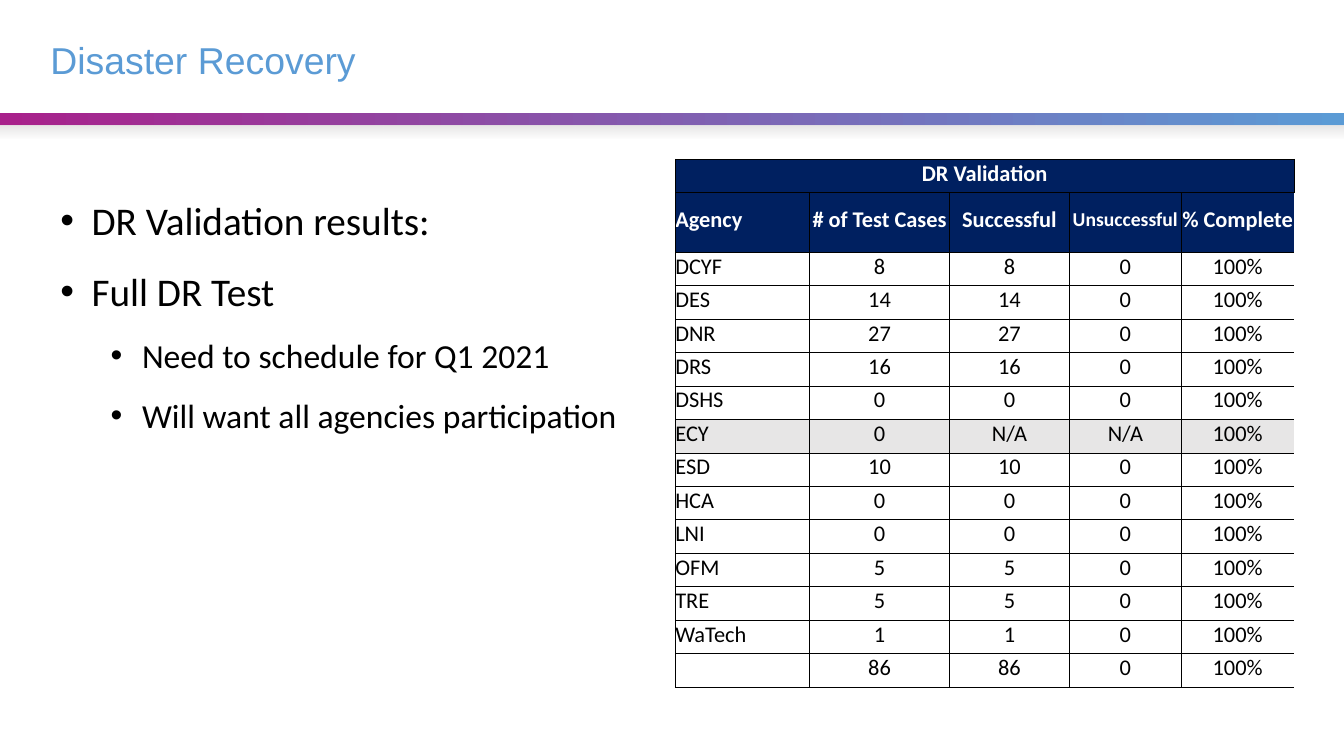
"""Disaster Recovery slide with test notes and a DR validation table."""
from lxml import etree
from pptx import Presentation
from pptx.dml import color
from pptx.enum import shapes, text
from pptx.oxml import ns
from pptx.util import Cm, Pt

TITLE = "Disaster Recovery"
NOTES = [
    (0, "DR Validation results:"),
    (0, "Full DR Test"),
    (1, "Need to schedule for Q1 2021"),
    (1, "Will want all agencies participation"),
]
NOTE_LEVELS = {0: (28, 0.79), 1: (24, 2.06)}
TABLE_TITLE = "DR Validation"
HEADINGS = ["Agency", "# of Test Cases", "Successful", "Unsuccessful", "% Complete"]
RESULTS = [
    ("DCYF", "8", "8", "0"),
    ("DES", "14", "14", "0"),
    ("DNR", "27", "27", "0"),
    ("DRS", "16", "16", "0"),
    ("DSHS", "0", "0", "0"),
    ("ECY", "0", "N/A", "N/A"),
    ("ESD", "10", "10", "0"),
    ("HCA", "0", "0", "0"),
    ("LNI", "0", "0", "0"),
    ("OFM", "5", "5", "0"),
    ("TRE", "5", "5", "0"),
    ("WaTech", "1", "1", "0"),
    ("", "86", "86", "0"),
]
COMPLETE = "100%"
COLUMN_WIDTHS = [3.38, 3.53, 3.02, 2.82, 2.84]
TABLE_HEIGHT, HEADING_HEIGHT = 13.31, 1.5
BANDS = [
    (2.84, (("A8218B", 100), ("5B9BD5", 100)), 0),
    (3.17, (("E7E6E6", 100), ("E7E6E6", 0)), 270),
]
BAND_HEIGHT = 0.33
NAVY, GREY, BLACK, WHITE, BLUE = "002060", "E7E6E6", "000000", "FFFFFF", "5B9BD5"
TITLE_FORMAT = {"name": "Arial", "size": Pt(26.7), "bold": False}


def rgb(value):
    return color.RGBColor.from_string(value)


def add_child(parent, tag, **attributes):
    return etree.SubElement(parent, ns.qn(tag), attributes)


def apply(target, formats):
    for name, value in formats.items():
        setattr(target, name, value)


def write(paragraph, words, ink, formats):
    run = paragraph.add_run()
    run.text = words
    apply(run.font, formats)
    run.font.color.rgb = rgb(ink)


def add_bands(slide, width):
    for top, stops, angle in BANDS:
        band = slide.shapes.add_shape(
            shapes.MSO_SHAPE.RECTANGLE, 0, Cm(top), width, Cm(BAND_HEIGHT))
        band.shadow.inherit = False
        band.line.fill.background()
        band.fill.gradient()
        band.fill.gradient_angle = angle
        for stop, (tint, opacity) in zip(band.fill.gradient_stops, stops):
            stop.color.rgb = rgb(tint)
        if opacity < 100:
            last = list(band.fill._fill._gradFill.iter(ns.qn("a:srgbClr")))[-1]
            add_child(last, "a:alpha", val=str(opacity * 1000))


def add_title(slide):
    title = slide.shapes.title
    apply(title, {"left": Cm(1.27), "top": Cm(0.64), "width": Cm(31.32), "height": Cm(1.9)})
    apply(title.text_frame, {
        "margin_left": 0, "margin_top": 0, "margin_right": 0, "margin_bottom": 0,
        "vertical_anchor": text.MSO_ANCHOR.MIDDLE})
    heading = title.text_frame.paragraphs[0]
    apply(heading, {"alignment": text.PP_ALIGN.LEFT, "line_spacing": Pt(26.7)})
    write(heading, TITLE, BLUE, TITLE_FORMAT)


def add_notes(slide):
    frame = slide.shapes.add_textbox(Cm(1.27), Cm(4.24), Cm(15.11), Cm(8.31)).text_frame
    frame.word_wrap = True
    for index, (level, words) in enumerate(NOTES):
        note = frame.add_paragraph() if index else frame.paragraphs[0]
        size, indent = NOTE_LEVELS[level]
        apply(note, {"level": level, "line_spacing": 1.5})
        properties = note._p.get_or_add_pPr()
        properties.set("marL", str(Cm(indent)))
        properties.set("indent", str(-Cm(0.79)))
        add_child(properties, "a:buFont", typeface="Arial")
        add_child(properties, "a:buChar", char="•")
        write(note, words, BLACK, {"name": "Calibri", "size": Pt(size)})


def add_borders(cell, open_sides):
    properties = cell._tc.get_or_add_tcPr()
    for side in "LRTB":
        edge = add_child(properties, f"a:ln{side}", w=str(Pt(0.5)))
        if side in open_sides:
            add_child(edge, "a:noFill")
        else:
            add_child(add_child(edge, "a:solidFill"), "a:srgbClr", val=BLACK)


def fill_cell(cell, words, row, column):
    is_header = row < 2
    add_borders(cell, "R" if column == len(HEADINGS) - 1 else "")
    apply(cell, {
        "margin_left": 0, "margin_top": 0, "margin_right": 0,
        "margin_bottom": Cm(0.12) if words else 0,
        "vertical_anchor": text.MSO_ANCHOR.MIDDLE if row else text.MSO_ANCHOR.BOTTOM})
    shade = NAVY if is_header else GREY if row > 1 and RESULTS[row - 2][0] == "ECY" else None
    if shade:
        cell.fill.solid()
        cell.fill.fore_color.rgb = rgb(shade)
    else:
        cell.fill.background()
    if words:
        entry = cell.text_frame.paragraphs[0]
        if row == 0 or column:
            entry.alignment = text.PP_ALIGN.CENTER
        size = 14 if words == "Unsuccessful" else 16
        write(entry, words, WHITE if is_header else BLACK,
              {"name": "Calibri", "size": Pt(size), "bold": is_header})


def add_results(slide):
    blanks = [""] * (len(HEADINGS) - 1)
    rows = [[TABLE_TITLE, *blanks], HEADINGS, *[(*result, COMPLETE) for result in RESULTS]]
    row_height = (TABLE_HEIGHT - HEADING_HEIGHT) / (len(rows) - 1)
    table = slide.shapes.add_table(
        len(rows), len(HEADINGS), Cm(17.02), Cm(4.01),
        Cm(sum(COLUMN_WIDTHS)), Cm(TABLE_HEIGHT)).table
    apply(table, {"first_row": False, "horz_banding": False})
    for column, width in zip(table.columns, COLUMN_WIDTHS):
        column.width = Cm(width)
    for row, values in enumerate(rows):
        table.rows[row].height = Cm(HEADING_HEIGHT if row == 1 else row_height)
        for column, words in enumerate(values):
            fill_cell(table.cell(row, column), words, row, column)
    table.cell(0, 0).merge(table.cell(0, len(HEADINGS) - 1))


def main():
    deck = Presentation()
    apply(deck, {"slide_width": Cm(33.87), "slide_height": Cm(19.05)})
    slide = deck.slides.add_slide(deck.slide_layouts[5])
    add_bands(slide, deck.slide_width)
    add_title(slide)
    add_notes(slide)
    add_results(slide)
    deck.save("out.pptx")


if __name__ == "__main__":
    main()
